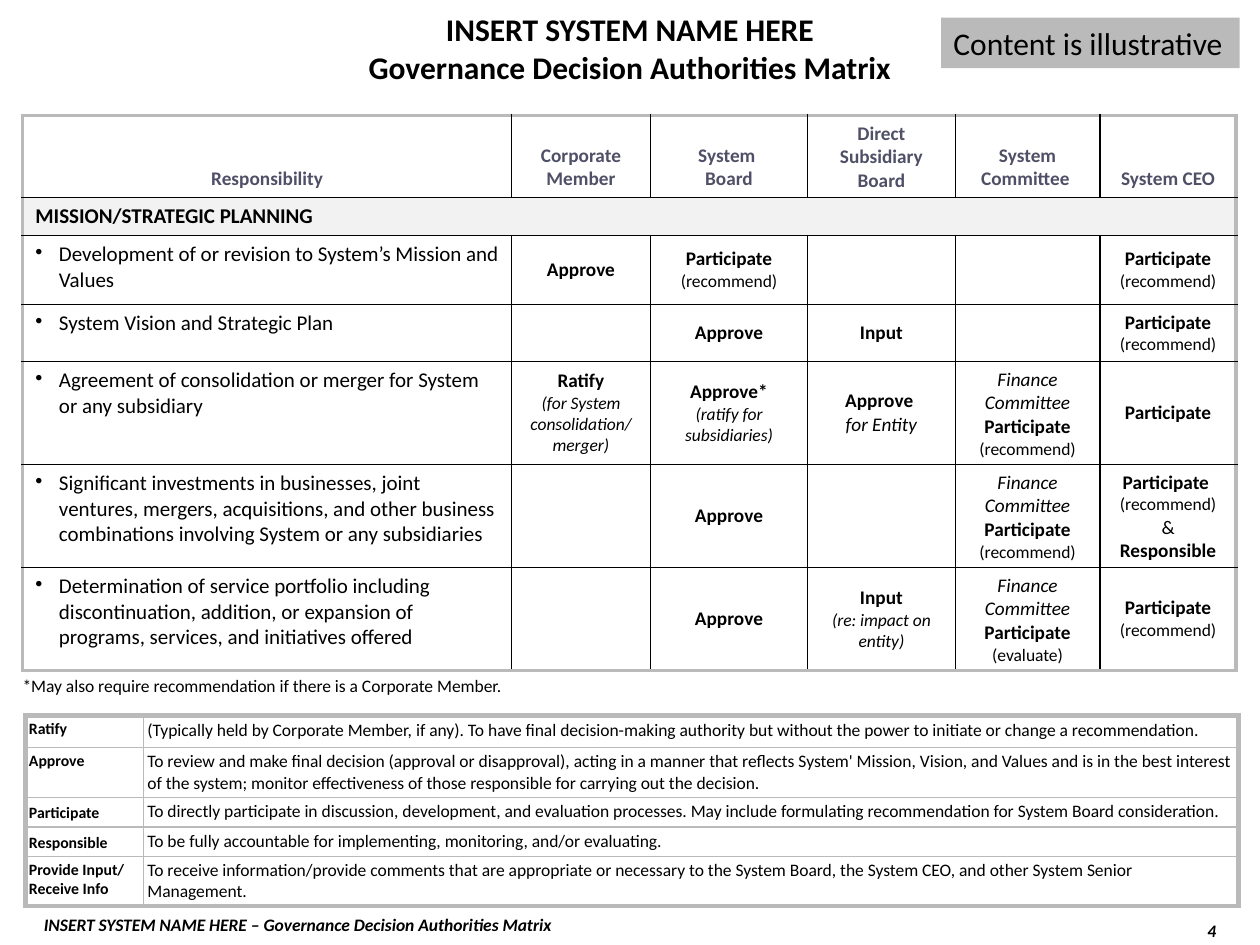
import pptx
import pptx.dml.color
import pptx.enum.shapes
import pptx.enum.text
import pptx.oxml
import pptx.oxml.ns
import pptx.util

Pt = pptx.util.Pt
ALIGN = pptx.enum.text.PP_ALIGN
ANCHOR = pptx.enum.text.MSO_ANCHOR
FONT, BLACK, GREY, HEADING, BAND = "Calibri", "000000", "BABABA", "4F4F67", "F2F2F2"

# Run styles: size, bold, italic
STRONG, SMALL, NOTE = (11, True, False), (10, False, False), (10, False, True)
PLAIN, ITALIC = (11, False, False), (11, False, True)
BODY, SECTION, TERM = (12, False, False), (12, True, False), (9, True, False)
TITLE, BADGE, FOOTER = (18, True, False), (18, False, False), (10, True, True)

# Recurring entries of the matrix
APPROVE = [("Approve", STRONG)]
RECOMMEND = [("Participate\n", STRONG), ("(recommend)", SMALL)]


def finance(action):
    return [("Finance Committee\n", ITALIC), ("Participate\n", STRONG), (action, SMALL)]


HEADERS = ["Responsibility", "Corporate Member", "System \nBoard",
           "Direct Subsidiary Board", "System Committee ", "System CEO"]
MATRIX = [
    ("Development of or revision to System’s Mission and Values",
     APPROVE, [("Participate ", STRONG), ("(recommend)", SMALL)], None, None, RECOMMEND),
    ("System Vision and Strategic Plan",
     None, APPROVE, [("Input", STRONG)], None, RECOMMEND),
    ("Agreement of consolidation or merger for System or any subsidiary",
     [("Ratify\n", STRONG), ("(for System consolidation/\nmerger)", NOTE)],
     [("Approve*\n", STRONG), ("(ratify for subsidiaries)", NOTE)],
     [("Approve \n", STRONG), ("for Entity", ITALIC)],
     finance("(recommend)"), [("Participate", STRONG)]),
    ("Significant investments in businesses, joint ventures, mergers, acquisitions, "
     "and other business combinations involving System or any subsidiaries",
     None, APPROVE, None, finance("(recommend)"),
     [("Participate \n", STRONG), ("(recommend) ", SMALL), ("& ", PLAIN),
      ("Responsible", STRONG)]),
    ("Determination of service portfolio including discontinuation, addition, "
     "or expansion of programs, services, and initiatives offered",
     None, APPROVE, [("Input\n", STRONG), ("(re: impact on entity)", NOTE)],
     finance("(evaluate)"), RECOMMEND),
]
DEFINITIONS = [
    ("Ratify", "(Typically held by Corporate Member, if any). To have final decision-making "
     "authority but without the power to initiate or change a recommendation."),
    ("Approve", "To review and make final decision (approval or disapproval), acting in a "
     "manner that reflects System' Mission, Vision, and Values and is in the best interest "
     "of the system; monitor effectiveness of those responsible for carrying out the decision."),
    ("Participate", "To directly participate in discussion, development, and evaluation "
     "processes. May include formulating recommendation for System Board consideration."),
    ("Responsible", "To be fully accountable for implementing, monitoring, and/or evaluating."),
    ("Provide Input/ Receive Info", "To receive information/provide comments that are "
     "appropriate or necessary to the System Board, the System CEO, and other System "
     "Senior Management."),
]


def rgb(color):
    return pptx.dml.color.RGBColor.from_string(color)


def set_font(font, style, color):
    size, font.bold, font.italic = style
    font.size, font.name = Pt(size), FONT
    font.color.rgb = rgb(color)


def write(tf, runs, align=ALIGN.LEFT, color=BLACK):
    """Fill the first paragraph with (text, style) runs; a newline is a line break."""
    p = tf.paragraphs[0]
    p.alignment = align
    set_font(p.font, runs[0][1], color)
    for text, style in runs:
        for i, line in enumerate(text.split("\n")):
            if i:
                p.add_line_break()
            if line:
                r = p.add_run()
                r.text = line
                set_font(r.font, style, color)
    return p


def add_text(s, box, text, style, align=ALIGN.LEFT, anchor=ANCHOR.TOP):
    tf = s.shapes.add_textbox(*map(Pt, box)).text_frame
    tf.word_wrap, tf.vertical_anchor = True, anchor
    write(tf, [(text, style)], align)


def add_badge(s, box, text):
    sp = s.shapes.add_shape(pptx.enum.shapes.MSO_SHAPE.RECTANGLE, *map(Pt, box))
    sp.shadow.inherit = False
    sp.fill.solid()
    sp.fill.fore_color.rgb = rgb(GREY)
    sp.line.fill.background()
    sp.text_frame.word_wrap = False
    sp.text_frame.vertical_anchor = ANCHOR.TOP
    write(sp.text_frame, [(text, BADGE)])


def add_bullet(p, indent):
    pPr = p._p.get_or_add_pPr()
    pPr.set("marL", str(Pt(indent)))
    pPr.set("indent", str(-Pt(indent)))
    pPr.insert_element_before(pptx.oxml.parse_xml(
        f'<a:buChar {pptx.oxml.ns.nsdecls("a")} char="•"/>'), "a:tabLst", "a:defRPr")


def add_borders(table, inner, outer):
    """Draw (colour, width) borders: outer on the table's edge, inner elsewhere."""
    last_row, last_col = len(table.rows) - 1, len(table.columns) - 1
    for r in range(last_row + 1):
        for c in range(last_col + 1):
            cell = table.cell(r, c)
            if cell.is_spanned:
                continue
            right = c + cell.span_width - 1 if cell.is_merge_origin else c
            edges = {"L": c == 0, "R": right == last_col, "T": r == 0, "B": r == last_row}
            tcPr = cell._tc.get_or_add_tcPr()
            for side, on_edge in edges.items():
                color, width = outer if on_edge else inner
                tcPr.append(pptx.oxml.parse_xml(
                    f'<a:ln{side} {pptx.oxml.ns.nsdecls("a")} w="{Pt(width)}"><a:solidFill>'
                    f'<a:srgbClr val="{color}"/></a:solidFill></a:ln{side}>'))
            cell.fill.background()


def add_table(s, left, top, widths, heights):
    table = s.shapes.add_table(len(heights), len(widths), Pt(left), Pt(top),
                               Pt(sum(widths)), Pt(sum(heights))).table
    table.first_row = table.horz_banding = False
    for col, width in zip(table.columns, widths):
        col.width = Pt(width)
    for row, height in zip(table.rows, heights):
        row.height = Pt(height)
    return table


def add_matrix(s):
    table = add_table(s, 13, 66, [279.4, 79.2, 90, 84.2, 82.8, 77.8],
                      [46.8, 21.6, 39.4, 32.6, 58.8, 58.8, 58.8])
    table.cell(1, 0).merge(table.cell(1, 5))
    add_borders(table, (BLACK, 0.75), (GREY, 2.25))
    # Header and section rows
    for c, header in enumerate(HEADERS):
        cell = table.cell(0, c)
        cell.vertical_anchor = ANCHOR.BOTTOM
        write(cell.text_frame, [(header, STRONG)], ALIGN.CENTER, HEADING)
    section = table.cell(1, 0)
    section.fill.solid()
    section.fill.fore_color.rgb = rgb(BAND)
    write(section.text_frame, [("MISSION/STRATEGIC PLANNING", SECTION)])
    # Responsibilities and who holds them
    for r, (responsibility, *roles) in enumerate(MATRIX, 2):
        add_bullet(write(table.cell(r, 0).text_frame, [(responsibility, BODY)]), 13.5)
        for c, runs in enumerate(roles, 1):
            cell = table.cell(r, c)
            cell.vertical_anchor = ANCHOR.MIDDLE
            if runs:
                write(cell.text_frame, runs, ALIGN.CENTER)


def add_definitions(s):
    table = add_table(s, 14.4, 409, [67.7, 625.7], [18.2, 28, 17, 16.6, 25.6])
    add_borders(table, (GREY, 1), (GREY, 3))
    for r, (term, meaning) in enumerate(DEFINITIONS):
        for c, (text, style) in enumerate([(term, TERM), (meaning, SMALL)]):
            cell = table.cell(r, c)
            cell.margin_left = cell.margin_right = Pt(2.16)
            cell.margin_top = cell.margin_bottom = Pt(2.16)
            p = write(cell.text_frame, [(text, style)])
            if c == 1:
                p.space_before = p.space_after = Pt(3)
            elif term in ("Participate", "Responsible"):
                p.line_spacing = 1.15


def main():
    prs = pptx.Presentation()
    prs.slide_width, prs.slide_height = Pt(720), Pt(540)
    s = prs.slides.add_slide(prs.slide_layouts[6])
    name = "Governance Decision Authorities Matrix"
    # Footer and title
    add_text(s, (18, 519, 468, 19.4), f"INSERT SYSTEM NAME HERE – {name}", FOOTER)
    add_text(s, (0, 0, 720, 54.7), f"INSERT SYSTEM NAME HERE\n{name}", TITLE,
             ALIGN.CENTER, ANCHOR.MIDDLE)
    # Tables
    add_matrix(s)
    add_definitions(s)
    # Page number, badge and footnote
    add_text(s, (550, 522, 152, 18), "4", FOOTER, ALIGN.RIGHT)
    add_badge(s, (537.8, 10, 170.6, 29), "Content is illustrative")
    add_text(s, (5.8, 382.3, 585.4, 19.4),
             "*May also require recommendation if there is a Corporate Member.", SMALL)
    prs.save("out.pptx")


if __name__ == "__main__":
    main()
